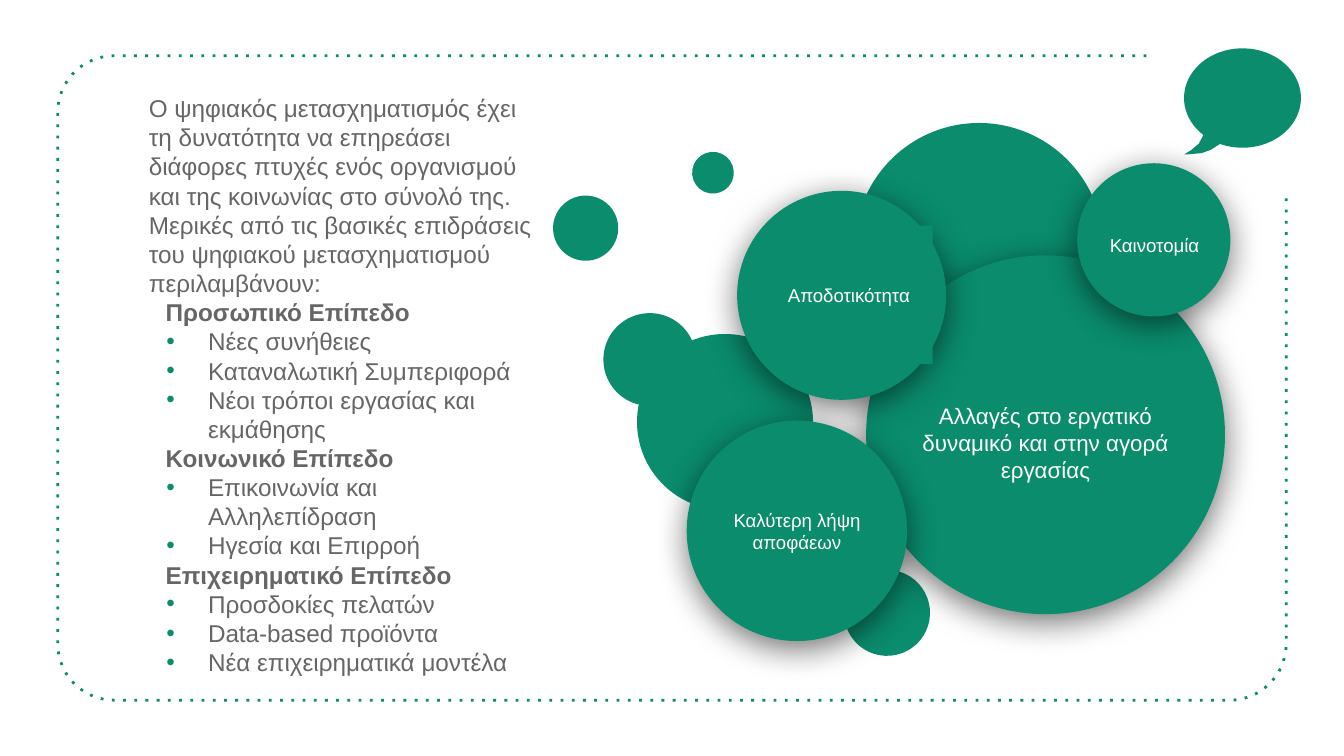
from math import cos, radians, sin

from lxml import etree
from pptx import Presentation
from pptx.dml.color import RGBColor
from pptx.enum.dml import MSO_LINE
from pptx.enum.shapes import MSO_SHAPE as SHAPE
from pptx.enum.text import MSO_ANCHOR as ANCHOR, PP_ALIGN as ALIGN
from pptx.oxml.ns import qn
from pptx.util import Pt

PX = 4572  # EMU per px, 200 px to the inch
THEME = {
    "green": RGBColor.from_string("0A8C6D"),
    "grey": RGBColor.from_string("666666"),
    "white": RGBColor.from_string("FFFFFF"),
    "font": "Arial",
    "body": 13, "large": 12, "small": 10,
}


def add_text(tf, text, size, color, bold=False, align=ALIGN.LEFT, before=0,
             margin=0, indent=0, bullet=None):
    """Add one paragraph, using the empty first one when it is free."""
    p = tf.paragraphs[0]
    if p.runs:
        p = tf.add_paragraph()
    p.alignment, p.space_before = align, Pt(before)
    pPr = p._p.get_or_add_pPr()
    pPr.set("marL", str(margin * PX))
    pPr.set("indent", str(indent * PX))
    if bullet:
        clr = etree.SubElement(pPr, qn("a:buClr"))
        etree.SubElement(clr, qn("a:srgbClr"), val=str(THEME["green"]))
        etree.SubElement(pPr, qn("a:buFont"), typeface=THEME["font"])
        etree.SubElement(pPr, qn("a:buChar"), char=bullet)
    else:
        etree.SubElement(pPr, qn("a:buNone"))
    r = p.add_run()
    r.text = text
    r.font.name, r.font.size, r.font.bold = THEME["font"], Pt(size), bold
    r.font.color.rgb = color


def paint(s, outlined=False):
    """Flat green shape without a shadow."""
    s.shadow.inherit = False
    s.fill.solid()
    s.fill.fore_color.rgb = THEME["green"]
    if outlined:
        s.line.color.rgb = THEME["green"]
        s.line.width = Pt(0.75)
    else:
        s.line.fill.background()


prs = Presentation()
prs.slide_width, prs.slide_height = 2000 * PX, 1125 * PX
slide = prs.slides.add_slide(prs.slide_layouts[6])

# Dotted frame, open at the top right corner
LEFT, TOP, RIGHT, BOTTOM, RADIUS = 86, 83, 1914, 1042, 84
corners = [(LEFT + RADIUS, TOP + RADIUS, 270),
           (LEFT + RADIUS, BOTTOM - RADIUS, 180),
           (RIGHT - RADIUS, BOTTOM - RADIUS, 90)]
points = [((cx + RADIUS * cos(radians(start - step))) * PX,
           (cy + RADIUS * sin(radians(start - step))) * PX)
          for cx, cy, start in corners for step in range(0, 91, 6)]
fb = slide.shapes.build_freeform(1706 * PX, TOP * PX)
fb.add_line_segments(points + [(RIGHT * PX, 292 * PX)], close=False)
s = fb.convert_to_shape()
s.shadow.inherit = False
s.fill.background()
s.line.color.rgb = THEME["green"]
s.line.width = Pt(1.5)
s.line.dash_style = MSO_LINE.ROUND_DOT
s.line._ln.find(qn("a:prstDash")).set("val", "dot")

# Small background circles: left, top, diameter, outlined
group = slide.shapes.add_group_shape()
for x, y, d, outlined in [(1256, 848, 128, False), (823, 291, 97, False),
                          (948, 497, 262, False), (1273, 184, 368, True),
                          (898, 466, 138, False), (1031, 227, 60, True)]:
    s = group.shapes.add_shape(SHAPE.OVAL, x * PX, y * PX, d * PX, d * PX)
    s.rotation = 250
    paint(s, outlined)

# Labelled circles: (left, top, diameter), label box, text, size, outlined
topics = [
    ((1289, 380, 534), (1352, 532, 408, 254),
     "Αλλαγές στο εργατικό δυναμικό και στην αγορά εργασίας", "large", False),
    ((1097, 284, 311), (1146, 336, 242, 206),
     "Αποδοτικότητα ", "small", False),
    ((1022, 626, 328), (1069, 687, 234, 206),
     "Καλύτερη λήψη αποφάεων", "small", False),
    ((1604, 244, 226), (1628, 304, 180, 120), "Καινοτομία", "small", True),
]
for (x, y, d), box, text, size, outlined in topics:
    group = slide.shapes.add_group_shape()
    s = group.shapes.add_shape(SHAPE.OVAL, x * PX, y * PX, d * PX, d * PX)
    paint(s, outlined)
    shadow = etree.SubElement(
        s._element.spPr.find(qn("a:effectLst")), qn("a:outerShdw"),
        blurRad=str(Pt(18)), dist=str(Pt(4)), dir="5400000",
        algn="ctr", rotWithShape="0")
    clr = etree.SubElement(shadow, qn("a:srgbClr"), val="000000")
    etree.SubElement(clr, qn("a:alpha"), val="55000")

    s = group.shapes.add_shape(SHAPE.RECTANGLE, *(v * PX for v in box))
    paint(s, outlined)
    tf = s.text_frame
    tf.word_wrap, tf.vertical_anchor = True, ANCHOR.MIDDLE
    tf.margin_left = tf.margin_right = tf.margin_top = tf.margin_bottom = 20 * PX
    add_text(tf, text, THEME[size], THEME["white"], align=ALIGN.CENTER)

# Speech bubble: an ellipse left open where the tail joins
outline = [(1849 + 87 * cos(radians(a)), 146 + 74 * sin(radians(a)))
           for a in range(132, 473, 5)]
tail = [(1816, 214), (1802, 223), (1788, 228), (1766, 230), (1762, 230),
        (1772, 224), (1784, 214)]
points = [(x * PX, y * PX) for x, y in outline + tail]
fb = slide.shapes.build_freeform(*points[0])
fb.add_line_segments(points[1:], close=True)
paint(fb.convert_to_shape())

# Introduction and the three levels of impact
s = slide.shapes.add_textbox(202 * PX, 119 * PX, 620 * PX, 906 * PX)
tf = s.text_frame
tf.word_wrap = True
tf.margin_left = tf.margin_right = tf.margin_top = tf.margin_bottom = 20 * PX
add_text(tf, "Ο ψηφιακός μετασχηματισμός έχει τη δυνατότητα να επηρεάσει "
         "διάφορες πτυχές ενός οργανισμού και της κοινωνίας στο σύνολό της. "
         "Μερικές από τις βασικές επιδράσεις του ψηφιακού μετασχηματισμού "
         "περιλαμβάνουν:", THEME["body"], THEME["grey"], before=6)
levels = {
    "Προσωπικό Επίπεδο": ["Νέες συνήθειες", "Καταναλωτική Συμπεριφορά",
                          "Νέοι τρόποι εργασίας και εκμάθησης"],
    "Κοινωνικό Επίπεδο": ["Επικοινωνία και Αλληλεπίδραση",
                          "Ηγεσία και Επιρροή"],
    "Επιχειρηματικό Επίπεδο": ["Προσδοκίες πελατών", "Data-based προϊόντα",
                               "Νέα επιχειρηματικά μοντέλα"],
}
for level, effects in levels.items():
    add_text(tf, level, THEME["body"], THEME["grey"], bold=True, margin=25)
    for effect in effects:
        add_text(tf, effect, THEME["body"], THEME["grey"],
                 margin=88, indent=-62, bullet="•")

prs.save("out.pptx")
